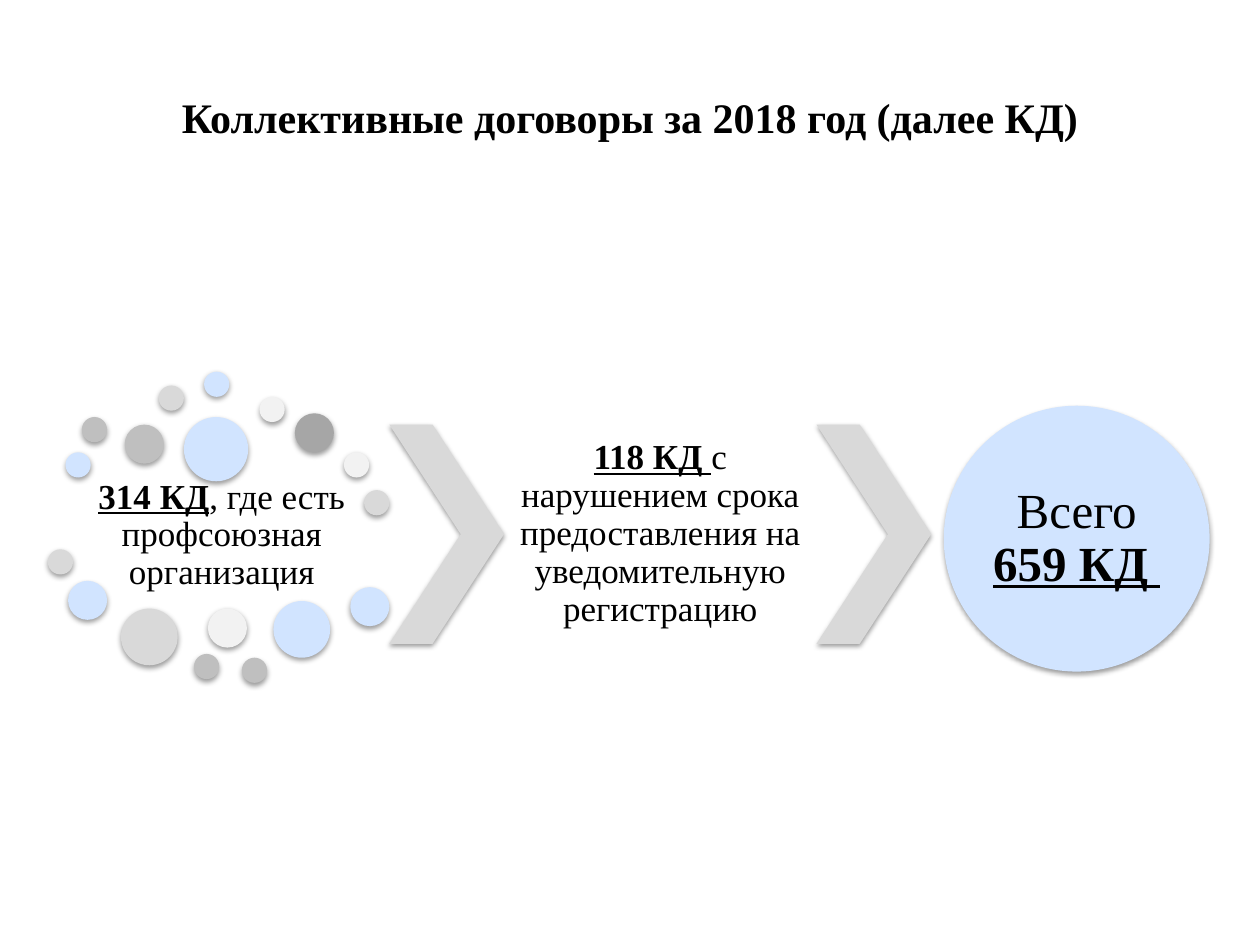
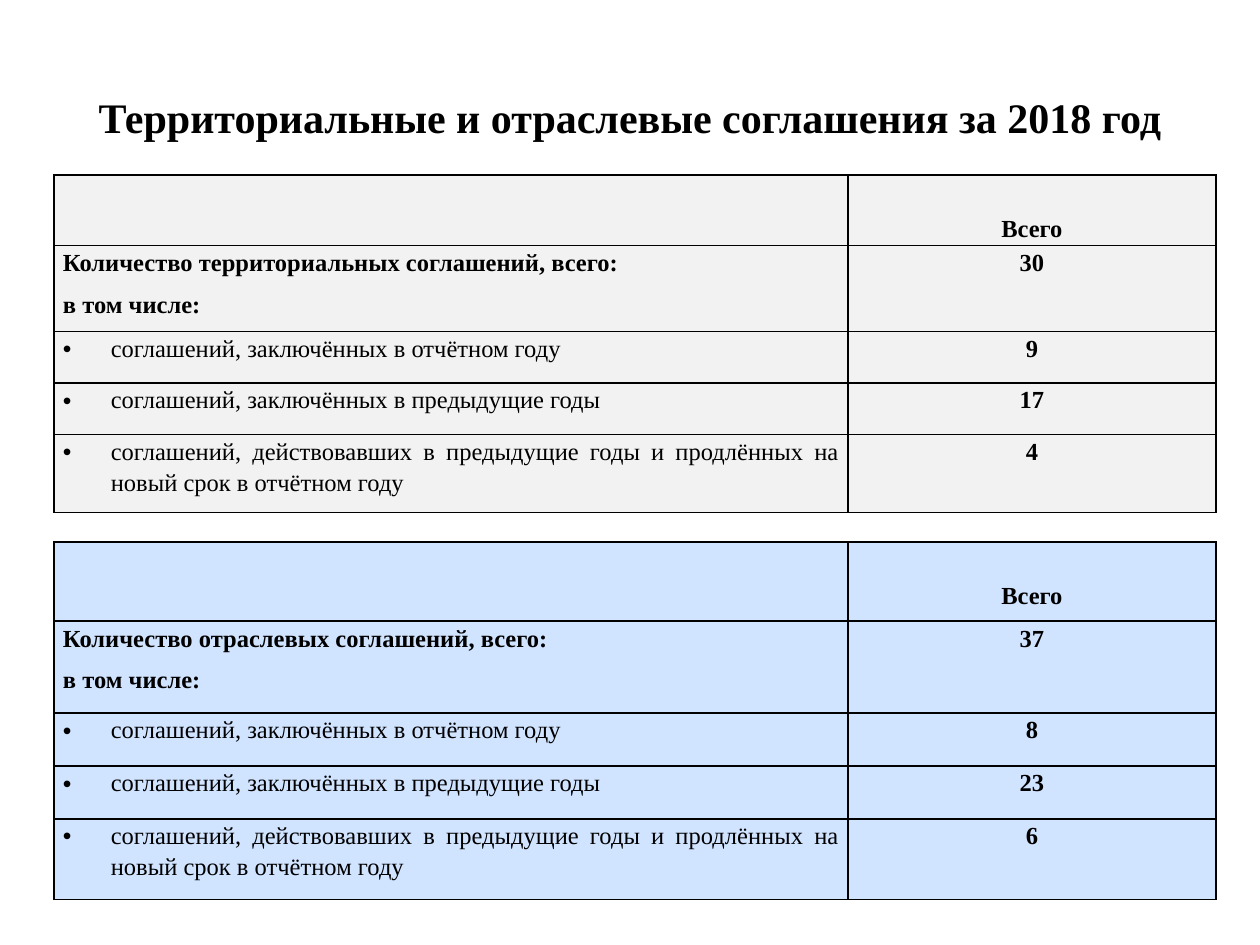
from dataclasses import dataclass

from lxml.etree import SubElement
from pptx import Presentation
from pptx.dml.color import RGBColor
from pptx.enum.shapes import MSO_SHAPE
from pptx.enum.text import MSO_ANCHOR, PP_ALIGN
from pptx.oxml.ns import qn
from pptx.util import Inches, Pt


@dataclass(frozen=True)
class Theme:
    font: str = "Times New Roman"
    ink: str = "000000"
    blue: str = "D1E4FF"
    pale: str = "F2F2F2"
    light: str = "D9D9D9"
    medium: str = "BFBFBF"
    dark: str = "A6A6A6"
    title_size: int = 24
    label_size: int = 20
    total_size: int = 28
    table_size: int = 14


THEME = Theme()

SMALL, MEDIUM, LARGE, LARGEST = 0.2, 0.31, 0.45, 0.51
# left, top, diameter, colour
BUBBLES = [
    (0.52, 3.59, SMALL, THEME.blue),
    (0.65, 3.31, SMALL, THEME.medium),
    (0.99, 3.37, MEDIUM, THEME.medium),
    (1.26, 3.06, SMALL, THEME.light),
    (1.62, 2.95, SMALL, THEME.blue),
    (2.06, 3.15, SMALL, THEME.pale),
    (2.34, 3.28, MEDIUM, THEME.dark),
    (2.73, 3.59, SMALL, THEME.pale),
    (2.89, 3.89, SMALL, THEME.light),
    (1.46, 3.31, LARGEST, THEME.blue),
    (0.38, 4.36, SMALL, THEME.light),
    (0.54, 4.61, MEDIUM, THEME.blue),
    (0.96, 4.83, LARGE, THEME.light),
    (1.54, 5.19, SMALL, THEME.medium),
    (1.65, 4.83, MEDIUM, THEME.pale),
    (1.92, 5.22, SMALL, THEME.medium),
    (2.17, 4.77, LARGE, THEME.blue),
    (2.78, 4.66, MEDIUM, THEME.blue),
]

DETAILS = [
    "соглашений, заключённых в отчётном году",
    "соглашений, заключённых в предыдущие годы",
    "соглашений, действовавших в предыдущие годы и продлённых на новый срок в отчётном году",
]


def add_span(para, text, size, bold=False, underline=False):
    span = para.add_run()
    span.text = text
    font = span.font
    font.name, font.size = THEME.font, Pt(size)
    font.bold, font.underline = bold, underline
    font.color.rgb = RGBColor.from_string(THEME.ink)


def add_page(deck, title):
    page = deck.slides.add_slide(deck.slide_layouts[5])
    box = page.shapes.title
    box.left, box.top, box.width, box.height = map(Inches, (0.5, 0.3, 9, 1.25))
    para = box.text_frame.paragraphs[0]
    para.alignment = PP_ALIGN.CENTER
    add_span(para, title, THEME.title_size, bold=True)
    return page


def add_soft_shadow(shape):
    shape.shadow.inherit = False
    effects = shape._element.spPr.find(qn("a:effectLst"))
    shadow = SubElement(effects, qn("a:outerShdw"), blurRad=str(Pt(3.1)),
                        dist=str(Pt(1.6)), dir="5400000", rotWithShape="0")
    colour = SubElement(shadow, qn("a:srgbClr"), val=THEME.ink)
    SubElement(colour, qn("a:alpha"), val="38000")


def add_figure(page, kind, left, top, width, height, colour):
    """Add a borderless preset shape with a soft shadow."""
    shape = page.shapes.add_shape(kind, *map(Inches, (left, top, width, height)))
    shape.fill.solid()
    shape.fill.fore_color.rgb = RGBColor.from_string(colour)
    shape.line.fill.background()
    add_soft_shadow(shape)
    return shape


def add_circle(page, left, top, diameter, colour):
    add_figure(page, MSO_SHAPE.OVAL, left, top, diameter, diameter, colour)


def add_chevron(page, left):
    chevron = add_figure(page, MSO_SHAPE.CHEVRON, left, 3.37, 0.91, 1.74, THEME.light)
    chevron.adjustments[0] = 0.623


def add_label(page, left, top, width, height, spans, size, inset=0.03):
    """Add a centred text box; spans are (text, emphasised) pairs."""
    box = page.shapes.add_textbox(*map(Inches, (left, top, width, height)))
    frame = box.text_frame
    frame.word_wrap = True
    frame.vertical_anchor = MSO_ANCHOR.MIDDLE
    frame.margin_left = frame.margin_right = Inches(inset)
    frame.margin_top = frame.margin_bottom = Inches(inset)
    para = frame.paragraphs[0]
    para.alignment = PP_ALIGN.CENTER
    para.line_spacing = 0.9
    for text, emphasised in spans:
        add_span(para, text, size, emphasised, emphasised)


def format_cell(cell, colour):
    properties = cell._tc.get_or_add_tcPr()
    for side in ("a:lnL", "a:lnR", "a:lnT", "a:lnB"):
        line = SubElement(properties, qn(side), w=str(Pt(1)))
        SubElement(SubElement(line, qn("a:solidFill")), qn("a:srgbClr"), val=THEME.ink)
    cell.fill.solid()
    cell.fill.fore_color.rgb = RGBColor.from_string(colour)
    cell.margin_left = cell.margin_right = Inches(0.07)
    cell.margin_top = cell.margin_bottom = 0


def add_bullet(para):
    properties = para._p.get_or_add_pPr()
    properties.set("marL", str(Inches(0.38)))
    properties.set("indent", str(-Inches(0.38)))
    SubElement(properties, qn("a:buFont"), typeface="Arial")
    SubElement(properties, qn("a:buChar"), char="•")


def write_cell(cell, lines, alignment, bold=True, bullet=False, space_before=6):
    frame = cell.text_frame
    for index, line in enumerate(lines):
        para = frame.add_paragraph() if index else frame.paragraphs[0]
        para.alignment = alignment
        para.line_spacing = 1.15
        para.space_before = Pt(space_before)
        if bullet:
            add_bullet(para)
        add_span(para, line, THEME.table_size, bold)


def add_agreements_table(page, top, heights, colour, heading, values):
    """Add a table of a total and its parts; values start with the total."""
    frame = page.shapes.add_table(len(heights), 2, Inches(0.43), Inches(top),
                                  Inches(9.22), Inches(sum(heights)))
    table = frame.table
    table.first_row = table.horz_banding = False
    for column, width in zip(table.columns, (6.3, 2.92)):
        column.width = Inches(width)
    for row, height in zip(table.rows, heights):
        row.height = Inches(height)
    for cell in table.iter_cells():
        format_cell(cell, colour)

    header = table.cell(0, 1)
    header.margin_top = Inches(0.29)
    write_cell(header, ["Всего"], PP_ALIGN.CENTER, space_before=0)
    write_cell(table.cell(1, 0), [heading, "в том числе:"], PP_ALIGN.JUSTIFY)
    for row, detail in enumerate(DETAILS, start=2):
        write_cell(table.cell(row, 0), [detail], PP_ALIGN.JUSTIFY, bold=False, bullet=True)
    for row, value in enumerate(values, start=1):
        write_cell(table.cell(row, 1), [str(value)], PP_ALIGN.CENTER)


def build_contracts_page(deck):
    page = add_page(deck, "Коллективные договоры за 2018 год (далее КД)")
    add_label(page, 0.52, 3.84, 2.48, 0.82,
              [("314 КД", True), (", где есть профсоюзная организация", False)],
              THEME.label_size)
    for bubble in BUBBLES:
        add_circle(page, *bubble)
    for left in (3.09, 6.48):
        add_chevron(page, left)
    add_label(page, 4, 3.37, 2.48, 1.74,
              [("118 КД ", True),
               ("с нарушением срока предоставления на уведомительную регистрацию", False)],
              THEME.label_size)
    add_circle(page, 7.49, 3.22, 2.11, THEME.blue)
    add_label(page, 7.8, 3.53, 1.49, 1.49, [("Всего ", False), ("659 КД ", True)],
              THEME.total_size, inset=0)


def build_agreements_page(deck):
    page = add_page(deck, "Территориальные и отраслевые соглашения за 2018 год")
    add_agreements_table(page, 1.39, (0.56, 0.68, 0.41, 0.41, 0.62), THEME.pale,
                         "Количество территориальных соглашений, всего:", (30, 9, 17, 4))
    add_agreements_table(page, 4.3, (0.63, 0.73, 0.42, 0.42, 0.64), THEME.blue,
                         "Количество отраслевых соглашений, всего:", (37, 8, 23, 6))


def main():
    deck = Presentation()
    deck.slide_width, deck.slide_height = Inches(10), Inches(7.5)
    build_contracts_page(deck)
    build_agreements_page(deck)
    deck.save("out.pptx")


if __name__ == "__main__":
    main()
